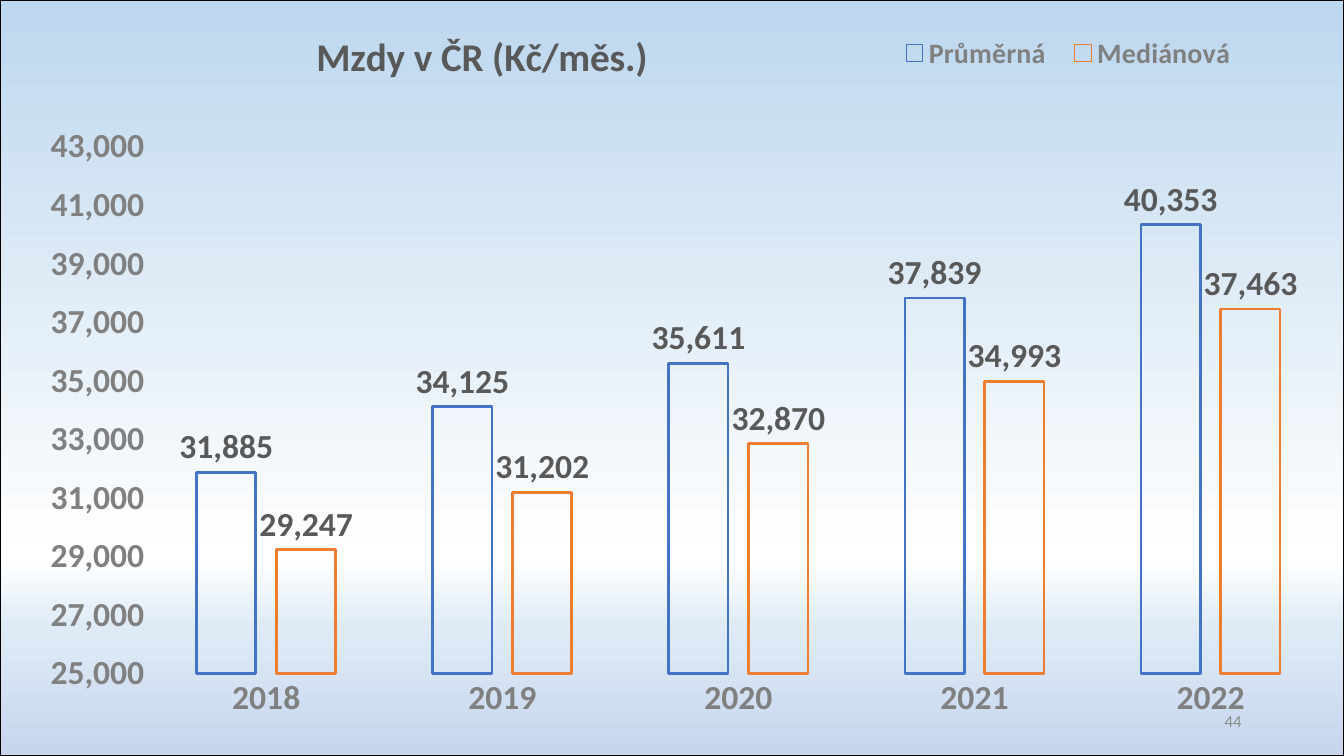
from dataclasses import dataclass

import pptx
import pptx.chart.data
import pptx.dml.color
import pptx.enum.chart
import pptx.enum.text
import pptx.oxml
import pptx.oxml.ns
import pptx.util

Pt = pptx.util.Pt
qn = pptx.oxml.ns.qn


@dataclass(frozen=True)
class Theme:
    face: str = "Calibri"
    strong: str = "595959"
    muted: str = "808080"
    page_number: str = "8C8C8C"
    border: str = "000000"
    bars: tuple = ("4472C4", "ED7D31")
    sky: tuple = ((0, "BDD7EE"), (74, "FFFFFF"), (83, "DEEBF7"), (100, "C7D5ED"))
    title_size: int = 28
    value_size: int = 24
    legend_size: int = 20
    page_size: int = 12


THEME = Theme()
WIDTH, HEIGHT = Pt(960), Pt(540)
YEARS = ("2018", "2019", "2020", "2021", "2022")
WAGES = {
    "Průměrná": (31885, 34125, 35611, 37839, 40353),
    "Mediánová": (29247, 31202, 32870, 34993, 37463),
}


def style_font(font, size, color, bold=True):
    font.name = THEME.face
    font.size = Pt(size)
    font.bold = bold
    font.color.rgb = pptx.dml.color.RGBColor.from_string(color)


def xml(tag, body):
    return pptx.oxml.parse_xml(
        f"<{tag} {pptx.oxml.ns.nsdecls('a', 'c')}>{body}</{tag}>")


def paint_background(slide):
    fill = slide.background.fill
    fill.gradient()
    fill.gradient_angle = 270
    stops = slide.element.find(".//" + qn("a:gsLst"))
    for stop in list(stops):
        stops.remove(stop)
    for percent, color in THEME.sky:
        stop = xml("a:gs", f'<a:srgbClr val="{color}"/>')
        stop.set("pos", str(percent * 1000))
        stops.append(stop)


def place(part, index, target="", **edges):
    """Give a chart part a fixed layout, in fractions of the chart."""
    for layout in part.findall(qn("c:layout")):
        part.remove(layout)
    inner = f'<c:layoutTarget val="{target}"/>' if target else ""
    modes = "".join(f'<c:{axis}Mode val="edge"/>' for axis in "xy")
    sizes = "".join(f'<c:{edge} val="{value}"/>' for edge, value in edges.items())
    part.insert(index, xml("c:layout", f"<c:manualLayout>{inner}{modes}{sizes}</c:manualLayout>"))


def frame_chart(chart):
    """Leave the chart area clear, with a thin outline."""
    area = chart.element.find(qn("c:chart"))
    area.addnext(xml(
        "c:spPr",
        f'<a:noFill/><a:ln w="{Pt(0.75)}"><a:solidFill>'
        f'<a:srgbClr val="{THEME.border}"/></a:solidFill></a:ln>'))
    place(area.find(qn("c:plotArea")), 0, "inner", x=0.11, y=0.194, w=0.879, h=0.698)


def add_title(chart, text):
    chart.has_title = True
    title = chart.chart_title
    title.include_in_layout = False
    heading = title.text_frame.paragraphs[0]
    heading.text = text
    style_font(heading.font, THEME.title_size, THEME.strong)
    place(title._element, 1, x=0.23, y=0.03)


def add_legend(chart):
    chart.has_legend = True
    legend = chart.legend
    legend.position = pptx.enum.chart.XL_LEGEND_POSITION.RIGHT
    legend.include_in_layout = False
    style_font(legend.font, THEME.legend_size, THEME.muted)
    place(legend._element, 1, x=0.66, y=0.03, w=0.27, h=0.08)


def style_axis(axis):
    axis.has_major_gridlines = False
    axis.major_tick_mark = pptx.enum.chart.XL_TICK_MARK.NONE
    axis.minor_tick_mark = pptx.enum.chart.XL_TICK_MARK.NONE
    axis.format.line.fill.background()
    style_font(axis.tick_labels.font, THEME.value_size, THEME.muted)


def style_bars(series, color):
    series.format.fill.background()
    series.format.line.color.rgb = pptx.dml.color.RGBColor.from_string(color)
    series.format.line.width = Pt(2)
    series.invert_if_negative = False
    labels = series.data_labels
    labels.show_value = True
    labels.number_format = "#,##0"
    labels.number_format_is_linked = False
    labels.position = pptx.enum.chart.XL_LABEL_POSITION.OUTSIDE_END
    style_font(labels.font, THEME.value_size, THEME.strong)


def add_wage_chart(slide):
    data = pptx.chart.data.CategoryChartData(number_format="#,##0")
    data.categories = YEARS
    for name, values in WAGES.items():
        data.add_series(name, values)
    chart = slide.shapes.add_chart(
        pptx.enum.chart.XL_CHART_TYPE.COLUMN_CLUSTERED, 0, 0, WIDTH, HEIGHT, data).chart
    style_font(chart.font, THEME.value_size, THEME.border)
    frame_chart(chart)
    add_title(chart, "Mzdy v ČR (Kč/měs.)")
    add_legend(chart)

    style_axis(chart.category_axis)
    wages = chart.value_axis
    style_axis(wages)
    wages.minimum_scale, wages.maximum_scale, wages.major_unit = 25000, 43000, 2000
    wages.tick_labels.number_format = "#,##0"
    wages.tick_labels.number_format_is_linked = False

    columns = chart.plots[0]
    columns.gap_width, columns.overlap = 164, -35
    columns.vary_by_categories = False
    for series, color in zip(columns.series, THEME.bars):
        style_bars(series, color)


def add_page_number(slide, number):
    frame = slide.shapes.add_textbox(Pt(678), Pt(500.5), Pt(216), Pt(28.75)).text_frame
    frame.word_wrap = True
    frame.vertical_anchor = pptx.enum.text.MSO_ANCHOR.MIDDLE
    line = frame.paragraphs[0]
    line.text = number
    line.alignment = pptx.enum.text.PP_ALIGN.RIGHT
    style_font(line.font, THEME.page_size, THEME.page_number, bold=False)


def main():
    deck = pptx.Presentation()
    deck.slide_width, deck.slide_height = WIDTH, HEIGHT
    slide = deck.slides.add_slide(deck.slide_layouts.get_by_name("Blank"))
    paint_background(slide)
    add_page_number(slide, "44")
    add_wage_chart(slide)
    deck.save("out.pptx")


if __name__ == "__main__":
    main()
